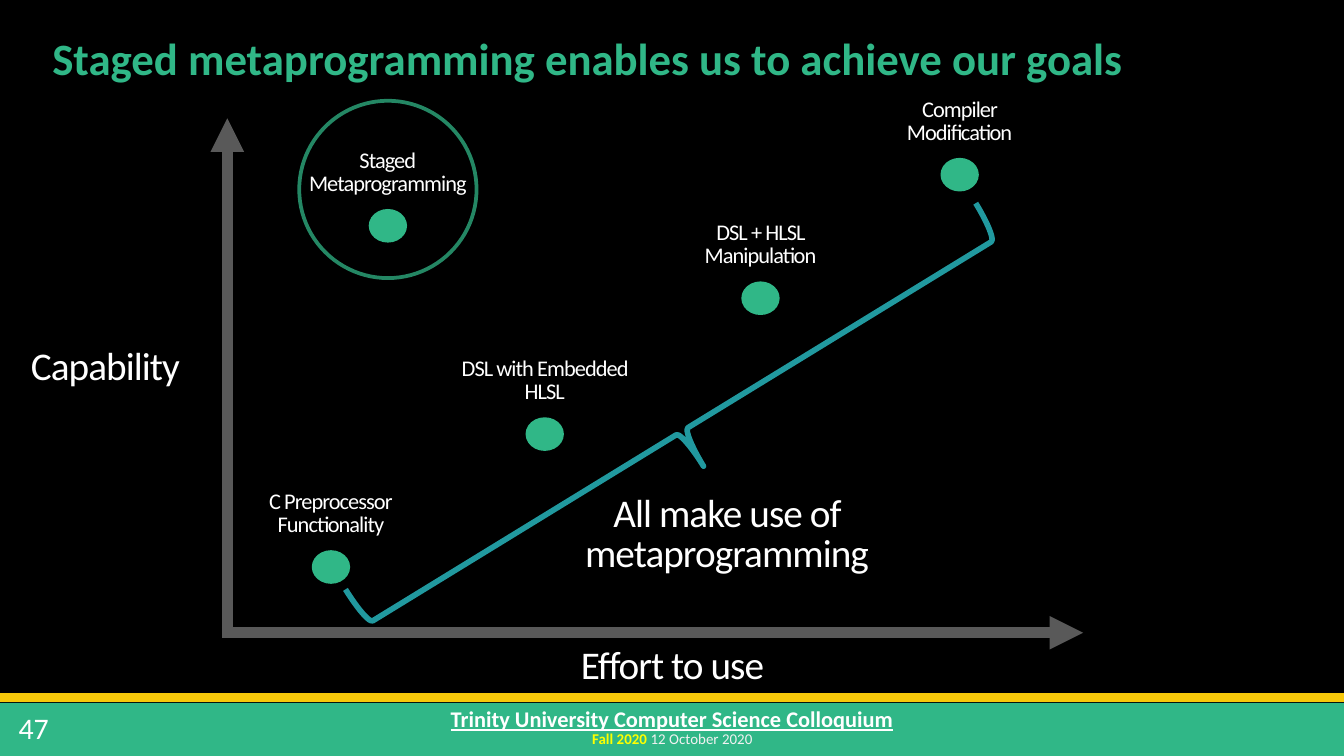
from dataclasses import dataclass

from pptx import Presentation
from pptx.dml.color import RGBColor
from pptx.enum.shapes import MSO_CONNECTOR, MSO_SHAPE
from pptx.enum.text import MSO_ANCHOR, MSO_AUTO_SIZE, PP_ALIGN
from pptx.oxml.ns import qn
from pptx.util import Pt
from lxml.etree import SubElement

WIDTH, HEIGHT = 720, 405
GREEN, WHITE, GREY, GOLD = "30B787", "FFFFFF", "595959", "F7C80A"
FONT = "Calibri"
DOT_W, DOT_H = 18.5, 16
LABEL_H, LABEL_RISE = 36.7, 28.4


@dataclass
class Approach:
    """A point on the chart: dot centre, label width and label paragraphs."""
    x: float
    y: float
    width: float
    lines: tuple[str, ...]


APPROACHES = [
    Approach(177.3, 303.8, 106, ("C Preprocessor", "Functionality")),
    Approach(291.8, 232.6, 101.5, ("DSL with Embedded HLSL",)),
    Approach(407.4, 159.8, 87, ("DSL + HLSL Manipulation",)),
    Approach(514.1, 93.6, 76.3, ("Compiler Modification",)),
    Approach(207.8, 121, 109.4, ("Staged", "Metaprogramming")),
]


def rgb(color: str) -> RGBColor:
    return RGBColor.from_string(color)


def add_run(p, text: str, size: float, color: str = WHITE, bold: bool = False,
            underline: bool = False, spacing: int | None = None):
    r = p.add_run()
    r.text = text
    r.font.name, r.font.size = FONT, Pt(size)
    r.font.bold = bold
    if underline:
        r.font.underline = True
    r.font.color.rgb = rgb(color)
    if spacing is not None:
        r._r.get_or_add_rPr().set("spc", str(spacing))
    return r


def add_box(shapes, left: float, top: float, width: float, height: float):
    tf = shapes.add_textbox(Pt(left), Pt(top), Pt(width), Pt(height)).text_frame
    tf.word_wrap = True
    return tf


def add_label(shapes, left: float, top: float, width: float, height: float,
              lines: tuple[str, ...], size: float) -> None:
    """Centred, tightly spaced label."""
    tf = add_box(shapes, left, top, width, height)
    tf.vertical_anchor = MSO_ANCHOR.MIDDLE
    tf.margin_left = tf.margin_right = Pt(5)
    tf.margin_top = tf.margin_bottom = Pt(2.9)
    for i, line in enumerate(lines):
        p = tf.add_paragraph() if i else tf.paragraphs[0]
        p.alignment, p.line_spacing = PP_ALIGN.CENTER, 0.85
        add_run(p, line, size, spacing=-50)


def add_shape(shapes, kind: MSO_SHAPE, left: float, top: float, width: float,
              height: float, fill: str | None = None, line: str | None = None,
              weight: float = 2):
    sp = shapes.add_shape(kind, Pt(left), Pt(top), Pt(width), Pt(height))
    sp.shadow.inherit = False
    if fill:
        sp.fill.solid()
        sp.fill.fore_color.rgb = rgb(fill)
    else:
        sp.fill.background()
    if line:
        sp.line.color.rgb, sp.line.width = rgb(line), Pt(weight)
    else:
        sp.line.fill.background()
    return sp


def add_line(shapes, x1: float, y1: float, x2: float, y2: float, color: str,
             weight: float, arrow: bool = False) -> None:
    c = shapes.add_connector(MSO_CONNECTOR.STRAIGHT, Pt(x1), Pt(y1), Pt(x2), Pt(y2))
    c.line.color.rgb, c.line.width = rgb(color), Pt(weight)
    if arrow:
        SubElement(c.line._get_or_add_ln(), qn("a:tailEnd"), type="triangle")
    SubElement(c._element.spPr, qn("a:effectLst"))


def add_approach(shapes, a: Approach) -> None:
    group = shapes.add_group_shape().shapes
    add_shape(group, MSO_SHAPE.OVAL, a.x - DOT_W / 2, a.y - DOT_H / 2,
              DOT_W, DOT_H, GREEN, GREEN)
    add_label(group, a.x - a.width / 2, a.y - LABEL_RISE - LABEL_H / 2,
              a.width, LABEL_H, a.lines, 12)


def main() -> None:
    prs = Presentation()
    prs.slide_width, prs.slide_height = Pt(WIDTH), Pt(HEIGHT)
    s = prs.slides.add_slide(prs.slide_layouts[5])
    s.background.fill.solid()
    s.background.fill.fore_color.rgb = rgb("000000")
    shapes = s.shapes

    # Footer band
    add_shape(shapes, MSO_SHAPE.RECTANGLE, 0, 376.6, WIDTH, HEIGHT - 376.6, GREEN)
    p = add_box(shapes, 20.2, 387.4, 680, 17.3).paragraphs[0]
    p.alignment = PP_ALIGN.CENTER
    add_run(p, "Fall 2020 ", 8, "FFFF00", bold=True)
    add_run(p, "12 October 2020", 8, "F2F2F2")
    p = add_box(shapes, 20.6, 374.4, 679, 21.6).paragraphs[0]
    p.alignment = PP_ALIGN.CENTER
    add_run(p, "Trinity University Computer Science Colloquium", 12,
            bold=True, underline=True)
    add_line(shapes, 0, 373.7, WIDTH, 373.7, GOLD, 5)
    p = add_box(shapes, 2.9, 376.6, 31, 28).paragraphs[0]
    add_run(p, "47", 16)

    # Title
    title = shapes.title
    title.left, title.top, title.width, title.height = Pt(28), Pt(16.6), Pt(671), Pt(50.4)
    tf = title.text_frame
    tf.auto_size, tf.vertical_anchor = MSO_AUTO_SIZE.NONE, MSO_ANCHOR.TOP
    tf.margin_left = tf.margin_right = tf.margin_top = tf.margin_bottom = 0
    p = tf.paragraphs[0]
    p.alignment = PP_ALIGN.LEFT
    add_run(p, "Staged metaprogramming enables us to achieve our goals", 24,
            GREEN, bold=True)

    # Axes
    add_line(shapes, 118.8, 339, 580.3, 339, GREY, 6, arrow=True)
    add_line(shapes, 121.8, 339, 121.8, 63.4, GREY, 6, arrow=True)
    add_label(shapes, 292.3, 339, 136, LABEL_H, ("Effort to use",), 21)
    add_label(shapes, 0, 179.3, 113, LABEL_H, ("Capability",), 21)

    # Approaches
    for a in APPROACHES:
        add_approach(shapes, a)

    # Brace over the metaprogramming approaches, and the highlight ring
    brace = add_shape(shapes, MSO_SHAPE.RIGHT_BRACE, 343.4, 33.1, 44, 396,
                      line="21999F", weight=3)
    brace.rotation = 58.5
    add_label(shapes, 252.7, 249.8, 273.6, 74.2, ("All make use of metaprogramming",), 21)
    add_shape(shapes, MSO_SHAPE.OVAL, 160.3, 54, 95, 95, line="248764")

    prs.save("out.pptx")


if __name__ == "__main__":
    main()
